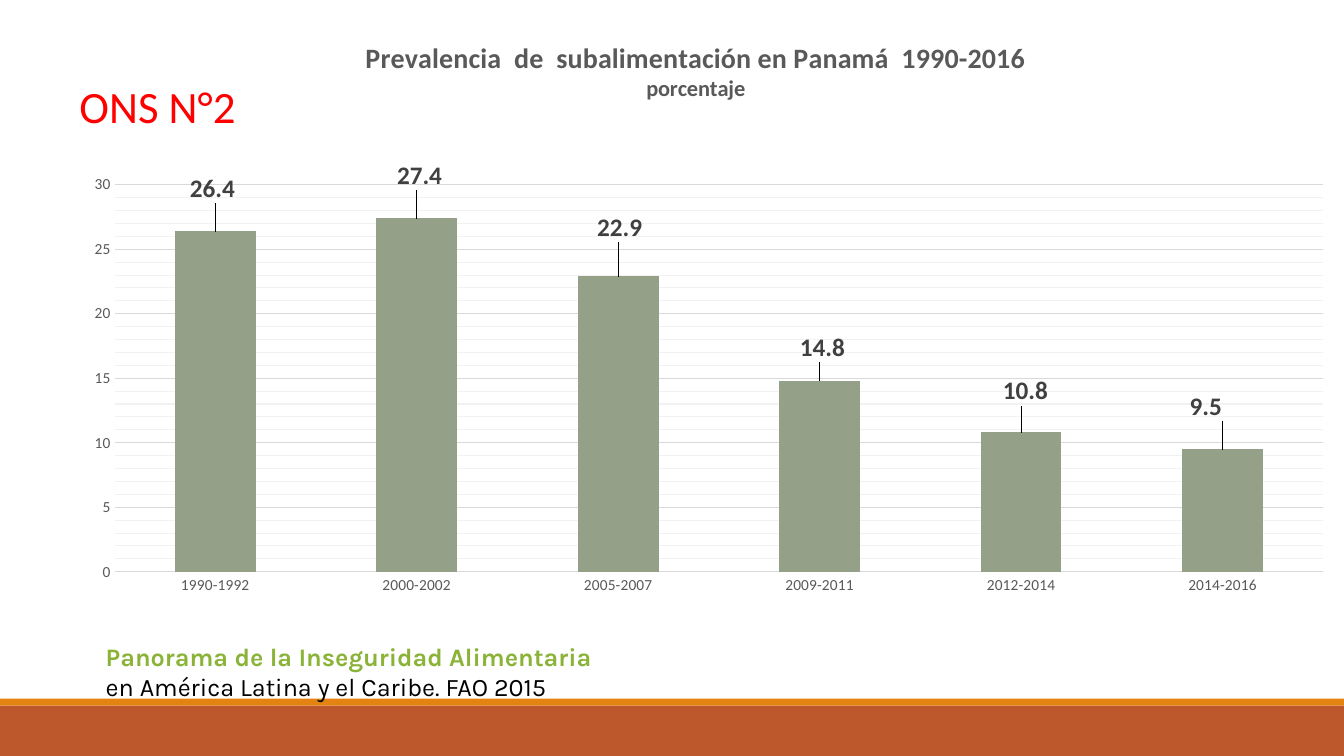
from copy import deepcopy

from lxml import etree
from pptx import Presentation
from pptx import util as u
from pptx.chart import data as chart_data
from pptx.dml import color
from pptx.enum import chart as chart_enum, shapes
from pptx.oxml import ns

COLORS = {
    "rust": "BD582C", "orange": "E48312", "sage": "94A088", "green": "8AB338",
    "red": "FF0000", "black": "000000", "title": "595959", "label": "404040",
    "major": "D9D9D9", "minor": "F2F2F2",
}


def write_text(paragraph, text, size, shade, name="Calibri", bold=False):
    run = paragraph.add_run()
    run.text = text
    run.font.size = u.Pt(size)
    run.font.name = name
    run.font.bold = bold
    run.font.color.rgb = color.RGBColor.from_string(COLORS[shade])


def place(parent, index, **values):
    for old in parent.findall(ns.qn("c:layout")):
        parent.remove(old)
    layout = etree.Element(ns.qn("c:layout"))
    manual = etree.SubElement(layout, ns.qn("c:manualLayout"))
    for tag, value in values.items():
        etree.SubElement(manual, ns.qn(f"c:{tag}")).set("val", str(value))
    parent.insert(index, layout)


presentation = Presentation()
presentation.slide_width = u.Pt(960)
presentation.slide_height = u.Pt(540)
slide = presentation.slides.add_slide(presentation.slide_layouts[6])

for top, height, shade in [(504, 36, "rust"), (499, 5, "orange")]:
    band = slide.shapes.add_shape(
        shapes.MSO_SHAPE.RECTANGLE, u.Pt(0), u.Pt(top), u.Pt(960), u.Pt(height))
    band.shadow.inherit = False
    band.fill.solid()
    band.fill.fore_color.rgb = color.RGBColor.from_string(COLORS[shade])
    band.line.fill.background()

prevalence = chart_data.CategoryChartData(number_format="0.0")
prevalence.categories = [
    "1990-1992", "2000-2002", "2005-2007", "2009-2011", "2012-2014", "2014-2016"]
prevalence.add_series("Series 1", [26.4, 27.4, 22.9, 14.8, 10.8, 9.5])
chart_width, chart_height = 908, 468.7
chart = slide.shapes.add_chart(
    chart_enum.XL_CHART_TYPE.COLUMN_CLUSTERED,
    u.Pt(41), u.Pt(11.5), u.Pt(chart_width), u.Pt(chart_height), prevalence).chart
chart.has_legend = False
chart.font.name = "Calibri"
chart.font.size = u.Pt(10)

chart.has_title = True
title = chart.chart_title
write_text(title.text_frame.paragraphs[0],
           "Prevalencia  de  subalimentación en Panamá  1990-2016", 20, "title", bold=True)
write_text(title.text_frame.add_paragraph(), "porcentaje", 16, "title", bold=True)
place(title.element, 1, xMode="edge", yMode="edge", x=0.24, y=0.03)

plot_area = chart.element.find(f".//{ns.qn('c:plotArea')}")
place(plot_area, 0, layoutTarget="inner", xMode="edge", yMode="edge",
      x=0.045, y=0.257, w=0.951, h=0.59)

for axis in (chart.category_axis, chart.value_axis):
    axis.major_tick_mark = chart_enum.XL_TICK_MARK.NONE
    axis.minor_tick_mark = chart_enum.XL_TICK_MARK.NONE
    axis.format.line.fill.background()
    axis.tick_labels.font.name = "Calibri"
    axis.tick_labels.font.size = u.Pt(11)
    axis.tick_labels.font.color.rgb = color.RGBColor.from_string(COLORS["title"])

value_axis = chart.value_axis
value_axis.minimum_scale, value_axis.maximum_scale = 0, 30
value_axis.major_unit, value_axis.minor_unit = 5, 1
value_axis.tick_labels.number_format = "0"
value_axis.tick_labels.number_format_is_linked = False
major_line = value_axis.major_gridlines.format.line
major_line.width = u.Pt(0.75)
major_line.color.rgb = color.RGBColor.from_string(COLORS["major"])
value_axis.has_minor_gridlines = True
major_grid = plot_area.find(f".//{ns.qn('c:majorGridlines')}")
minor_grid = plot_area.find(f".//{ns.qn('c:minorGridlines')}")
minor_grid.append(deepcopy(major_grid.find(ns.qn("c:spPr"))))
minor_grid.find(f".//{ns.qn('a:srgbClr')}").set("val", COLORS["minor"])

plot = chart.plots[0]
plot.gap_width = 150
plot.vary_by_categories = False
series = plot.series[0]
series.format.fill.solid()
series.format.fill.fore_color.rgb = color.RGBColor.from_string(COLORS["sage"])

label_shifts = [(-2, -17), (2, -17), (1, -21), (2, -10), (3, -16), (-12, -17)]
for index in range(len(label_shifts)):
    label = series.points[index].data_label
    label.font.name = "Calibri"
    label.font.size = u.Pt(18)
    label.font.bold = True
    label.font.color.rgb = color.RGBColor.from_string(COLORS["label"])
    label.position = chart_enum.XL_LABEL_POSITION.OUTSIDE_END
for element, (right, down) in zip(chart.element.iter(ns.qn("c:dLbl")), label_shifts):
    place(element, 1, x=round(right / chart_width, 4), y=round(down / chart_height, 4))

source_box = slide.shapes.add_textbox(u.Pt(68.4), u.Pt(454.3), u.Pt(480), u.Pt(51))
source_box.text_frame.word_wrap = True
write_text(source_box.text_frame.paragraphs[0],
           "Panorama de la Inseguridad Alimentaria", 18, "green", "Karla", True)
write_text(source_box.text_frame.add_paragraph(),
           "en América Latina y el Caribe. FAO 2015", 18, "black", "Karla")

heading_box = slide.shapes.add_textbox(u.Pt(49.7), u.Pt(52.6), u.Pt(277), u.Pt(46))
heading_box.text_frame.word_wrap = True
write_text(heading_box.text_frame.paragraphs[0], "ONS N°2", 32, "red")

presentation.save("out.pptx")
